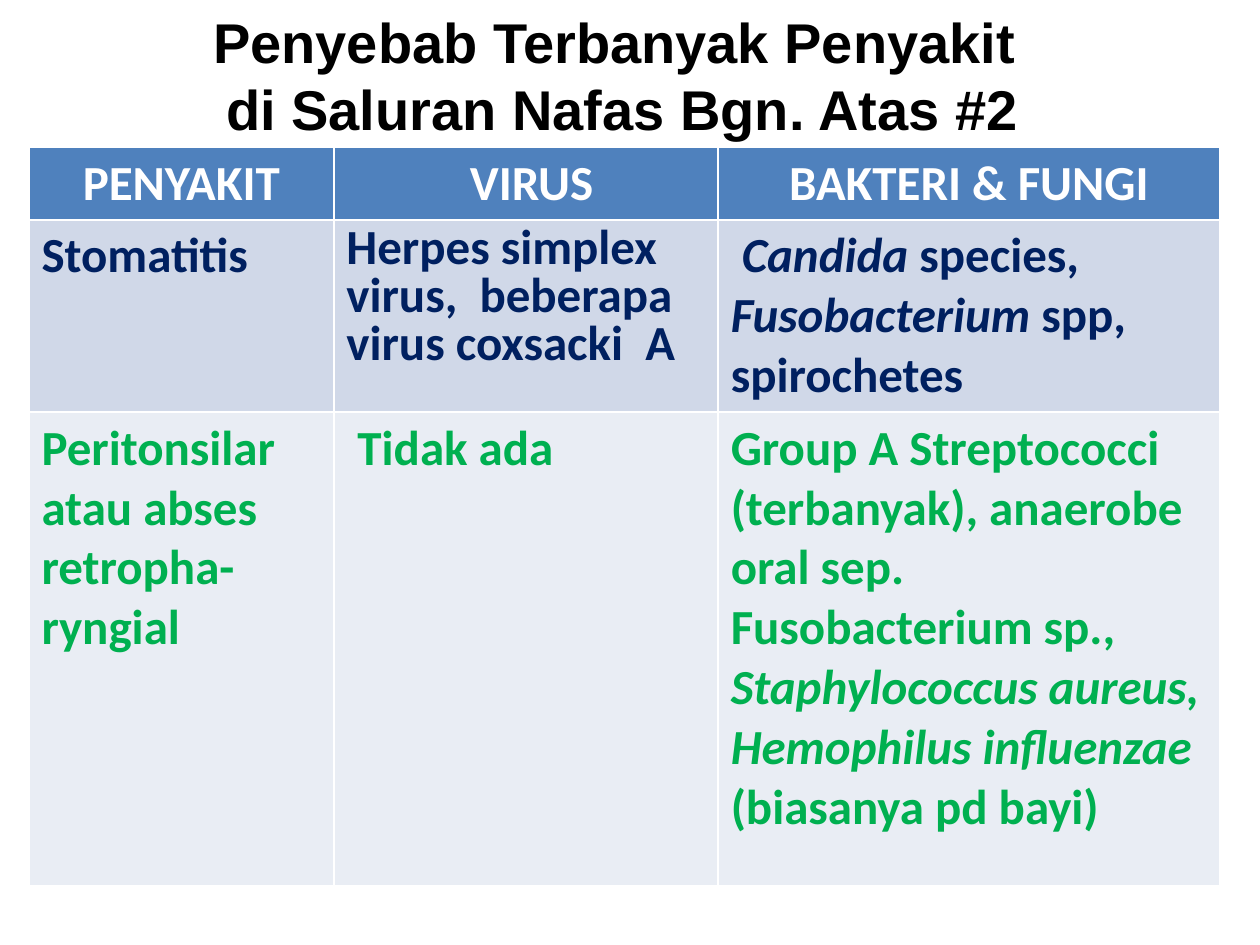
"""Build a slide with a table of upper airway diseases and their causes."""
from typing import Any, NamedTuple

from pptx import Presentation
from pptx.dml.color import RGBColor
from pptx.enum.text import MSO_ANCHOR as Anchor, PP_ALIGN as Align
from pptx.util import Inches, Pt


class Run(NamedTuple):
    text: str
    italic: bool = False


class Cell(NamedTuple):
    paras: list[list[Run]]
    form: dict[str, Any] = {}


class Row(NamedTuple):
    high: float
    fill: str
    ink: str
    cells: list[Cell]


MID = {"alignment": Align.CENTER}
TIGHT = {"line_spacing": 0.8, "space_before": Pt(5.6)}
COLS = [2.42, 3.05, 3.98]
TITLE = Cell([[Run("Penyebab Terbanyak Penyakit ")],
              [Run("di Saluran Nafas Bgn. Atas #2")]], MID)
HEADS = ["PENYAKIT", " VIRUS", "BAKTERI & FUNGI"]
ROWS = [
    Row(0.56, "4F81BD", "FFFFFF", [Cell([[Run(head)]], MID) for head in HEADS]),
    Row(1.49, "D0D8E8", "002060", [
        Cell([[Run("Stomatitis")]]),
        Cell([[Run("Herpes simplex virus,  beberapa virus coxsacki  A")]], TIGHT),
        Cell([[Run(" "), Run("Candida ", True), Run("species, "),
               Run("Fusobacterium ", True), Run("spp, spirochetes")]]),
    ]),
    Row(3.76, "E9EDF4", "00B050", [
        Cell([[Run("Peritonsilar  atau abses retropha-")], [Run("ryngial")]]),
        Cell([[Run(" Tidak ada")]]),
        Cell([[Run("Group A Streptococci (terbanyak), anaerobe oral sep. "
                   "Fusobacterium sp., "),
               Run("Staphylococcus aureus, Hemophilus influenzae", True),
               Run(" (biasanya pd bayi)")]]),
    ]),
]


def paint(part: Any, tone: str) -> None:
    """Give a fill a solid colour."""
    part.solid()
    part.fore_color.rgb = RGBColor.from_string(tone)


def style(part: Any, form: dict[str, Any]) -> None:
    """Set attributes from a dict of format values."""
    for name, value in form.items():
        setattr(part, name, value)


def write(frame: Any, cell: Cell, face: str, size: int, ink: str) -> None:
    """Write the paragraphs of a cell into a text frame."""
    for num, runs in enumerate(cell.paras):
        para = frame.add_paragraph() if num else frame.paragraphs[0]
        style(para, cell.form)
        for item in runs:
            run = para.add_run()
            run.text = item.text
            style(run.font, {"name": face, "size": Pt(size), "bold": True,
                             "italic": item.italic})
            paint(run.font.fill, ink)


def add_title(slide: Any) -> None:
    """Place and fill the title."""
    title = slide.shapes.title
    style(title, {"left": Inches(1.57), "top": Inches(0),
                  "width": Inches(6.74), "height": Inches(1.18)})
    style(title.text_frame, {"word_wrap": False,
                             "vertical_anchor": Anchor.MIDDLE})
    write(title.text_frame, TITLE, "Arial", 32, "000000")


def add_grid(slide: Any) -> None:
    """Add the table of diseases."""
    high = sum(row.high for row in ROWS)
    grid = slide.shapes.add_table(
        len(ROWS), len(COLS), Inches(0.23), Inches(1.17),
        Inches(sum(COLS)), Inches(high)).table
    for col, wide in zip(grid.columns, COLS):
        col.width = Inches(wide)
    for line, row in zip(grid.rows, ROWS):
        line.height = Inches(row.high)
        for box, cell in zip(line.cells, row.cells):
            paint(box.fill, row.fill)
            write(box.text_frame, cell, "Calibri", 28, row.ink)


def main() -> None:
    """Build and save the slide."""
    deck = Presentation()
    style(deck, {"slide_width": Inches(10), "slide_height": Inches(7.5)})
    slide = deck.slides.add_slide(deck.slide_layouts[5])
    add_title(slide)
    add_grid(slide)
    deck.save("out.pptx")


if __name__ == "__main__":
    main()
